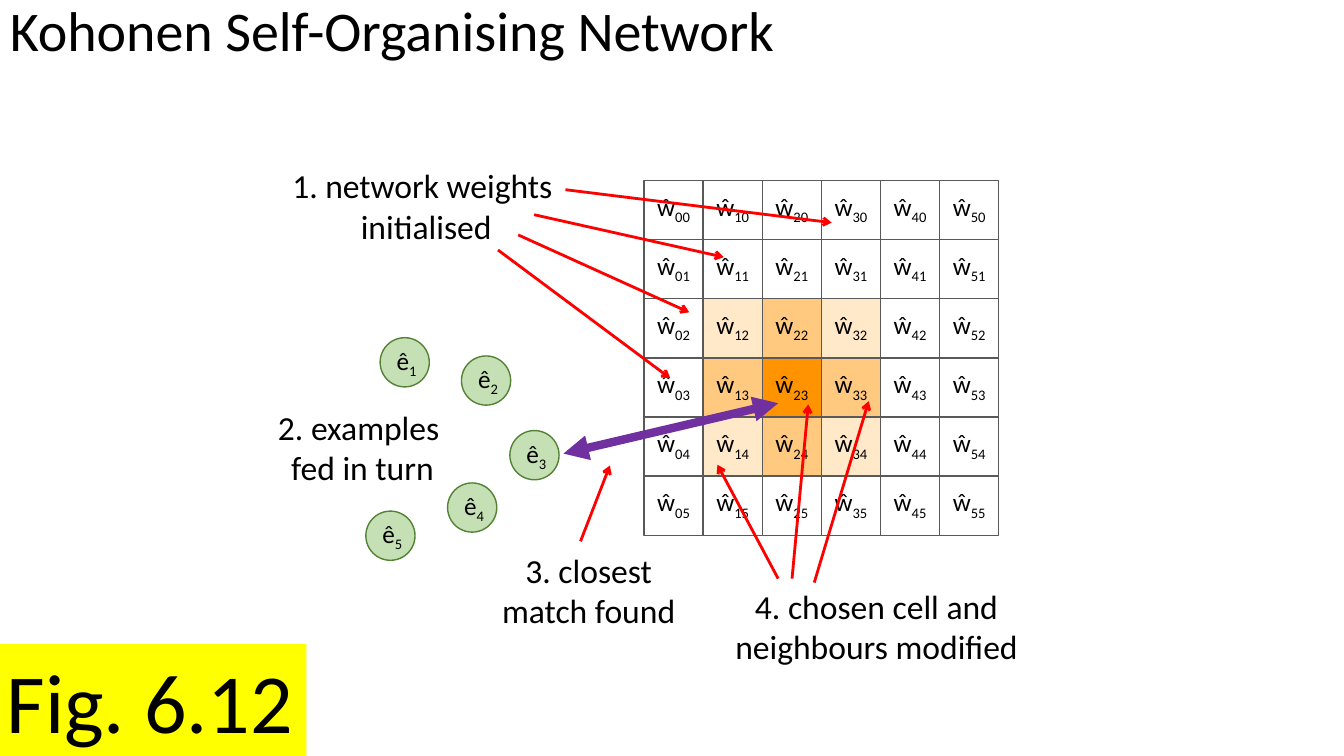
from pptx import Presentation
from pptx.dml.color import RGBColor
from pptx.enum.shapes import MSO_CONNECTOR, MSO_SHAPE
from pptx.enum.text import MSO_ANCHOR, PP_ALIGN
from pptx.oxml.ns import qn
from pptx.util import Cm, Pt
from lxml.etree import SubElement

BLACK = RGBColor(0x00, 0x00, 0x00)
WHITE = RGBColor(0xFF, 0xFF, 0xFF)
GREY = RGBColor(0x59, 0x59, 0x59)
RED = RGBColor(0xFF, 0x00, 0x00)
PURPLE = RGBColor(0x70, 0x30, 0xA0)
YELLOW = RGBColor(0xFF, 0xFF, 0x00)
LIGHT_GREEN = RGBColor(0xC5, 0xE0, 0xB4)
DARK_GREEN = RGBColor(0x54, 0x82, 0x35)
ORANGE = RGBColor(0xFF, 0x93, 0x00)
MID_ORANGE = RGBColor(0xFF, 0xCA, 0x7F)
PALE_ORANGE = RGBColor(0xFF, 0xE9, 0xC9)


def write_text(shape, text, size, subscript="", frame_format={}, paragraph_format={}):
    frame = shape.text_frame
    paragraph = frame.paragraphs[0]
    for name, value in frame_format.items():
        setattr(frame, name, value)
    for name, value in paragraph_format.items():
        setattr(paragraph, name, value)
    for index, line in enumerate(text.split("\n")):
        if index:
            paragraph.add_line_break()
        paragraph.add_run().text = line
    if subscript:
        run = paragraph.add_run()
        run.text = subscript
        run._r.get_or_add_rPr().set("baseline", "-25000")
    for run in paragraph.runs:
        for name, value in {"name": "Calibri", "size": Pt(size)}.items():
            setattr(run.font, name, value)
        run.font.color.rgb = BLACK


def add_filled_shape(kind, left, top, width, height, fill, outline=None):
    shape = slide.shapes.add_shape(kind, Cm(left), Cm(top), Cm(width), Cm(height))
    shape.shadow.inherit = False
    shape.fill.solid()
    shape.fill.fore_color.rgb = fill
    if outline is None:
        shape.line.fill.background()
    else:
        shape.line.color.rgb = outline
        shape.line.width = Pt(1)
    return shape


presentation = Presentation()
presentation.slide_width = Cm(33.87)
presentation.slide_height = Cm(19.05)
slide = presentation.slides.add_slide(presentation.slide_layouts[6])

centred_frame = {
    "word_wrap": False,
    "vertical_anchor": MSO_ANCHOR.MIDDLE,
    "margin_left": 0,
    "margin_right": 0,
    "margin_top": 0,
    "margin_bottom": 0,
}

# Weight grid, shaded by distance from the chosen cell
GRID_LEFT, GRID_TOP, CELL = 16.23, 4.55, 1.49
CHOSEN_COLUMN, CHOSEN_ROW = 2, 3
SHADES = [ORANGE, MID_ORANGE, PALE_ORANGE]
for column in range(6):
    for row in range(6):
        across, down = abs(column - CHOSEN_COLUMN), abs(row - CHOSEN_ROW)
        fill = SHADES[across + down] if max(across, down) <= 1 else WHITE
        cell = add_filled_shape(MSO_SHAPE.RECTANGLE, GRID_LEFT + column * CELL,
                                GRID_TOP + row * CELL, CELL, CELL, fill, GREY)
        write_text(cell, "ŵ", 18, f"{column}{row}", centred_frame,
                   {"alignment": PP_ALIGN.CENTER, "line_spacing": Pt(22)})

# Examples
example_positions = [(9.58, 8.51), (11.63, 8.97), (12.85, 10.85), (11.28, 12.17), (9.22, 12.88)]
for number, (left, top) in enumerate(example_positions, start=1):
    example = add_filled_shape(MSO_SHAPE.OVAL, left, top, 1.24, 1.24, LIGHT_GREEN, DARK_GREEN)
    write_text(example, "ê", 18, str(number), {**centred_frame, "margin_left": Cm(0.1)},
               {"alignment": PP_ALIGN.CENTER})

# Step labels
steps = [
    ("1. network weights\n initialised", 7.09, 4.04, 7.11),
    ("2. examples\n fed in turn", 6.73, 10.13, 4.62),
    ("3. closest\nmatch found", 12.37, 13.72, 4.93),
    ("4. chosen cell and\nneighbours modified", 18.24, 14.63, 7.7),
]
for text, left, top, width in steps:
    label = slide.shapes.add_textbox(Cm(left), Cm(top), Cm(width), Cm(2.31))
    write_text(label, text, 24, "", {"word_wrap": False}, {"alignment": PP_ALIGN.CENTER})

# Arrows: the closest match in purple, then the step pointers
match_style = (PURPLE, 6, {"headEnd": "triangle", "tailEnd": "triangle"})
pointer_style = (RED, 2, {"tailEnd": "arrow"})
arrows = [
    (14.2, 11.43, 19.61, 10.16, match_style),
    (14.63, 13.64, 15.37, 11.73, pointer_style),
    (13.46, 5.41, 18.24, 6.48, pointer_style),
    (13.06, 5.92, 17.37, 7.87, pointer_style),
    (19.96, 14.58, 20.37, 10.19, pointer_style),
    (20.52, 14.68, 21.89, 10.11, pointer_style),
    (19.61, 14.58, 18.08, 11.71, pointer_style),
    (12.55, 6.3, 16.89, 9.53, pointer_style),
    (14.25, 4.78, 20.96, 5.61, pointer_style),
]
for start_x, start_y, end_x, end_y, (color, width, ends) in arrows:
    arrow = slide.shapes.add_connector(MSO_CONNECTOR.STRAIGHT, Cm(start_x), Cm(start_y),
                                       Cm(end_x), Cm(end_y))
    arrow.line.color.rgb = color
    arrow.line.width = Pt(width)
    for end, kind in ends.items():
        SubElement(arrow.line._get_or_add_ln(), qn(f"a:{end}"), type=kind)
    SubElement(arrow._element.spPr, qn("a:effectLst"))

# Title
title = slide.shapes.add_textbox(Cm(0), Cm(-0.05), Cm(26.06), Cm(2.54))
write_text(title, "Kohonen Self-Organising Network", 40, "", {"word_wrap": True},
           {"line_spacing": 0.9})

# Figure number
figure = add_filled_shape(MSO_SHAPE.RECTANGLE, -0.08, 16.23, 7.8, 2.82, YELLOW)
write_text(figure, "Fig. 6.12", 60, "",
           {"word_wrap": False, "vertical_anchor": MSO_ANCHOR.TOP},
           {"alignment": PP_ALIGN.LEFT})

presentation.save("out.pptx")
